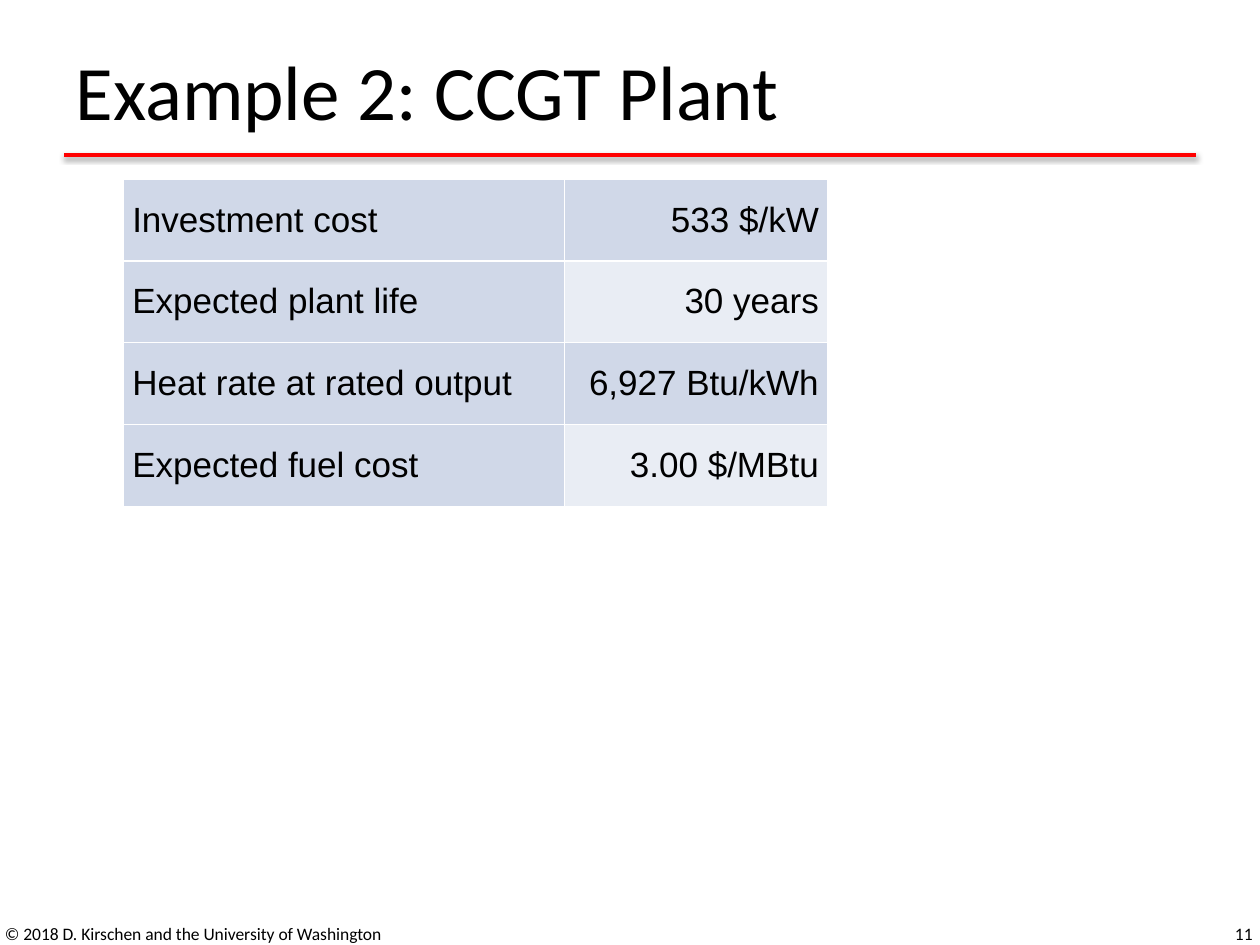
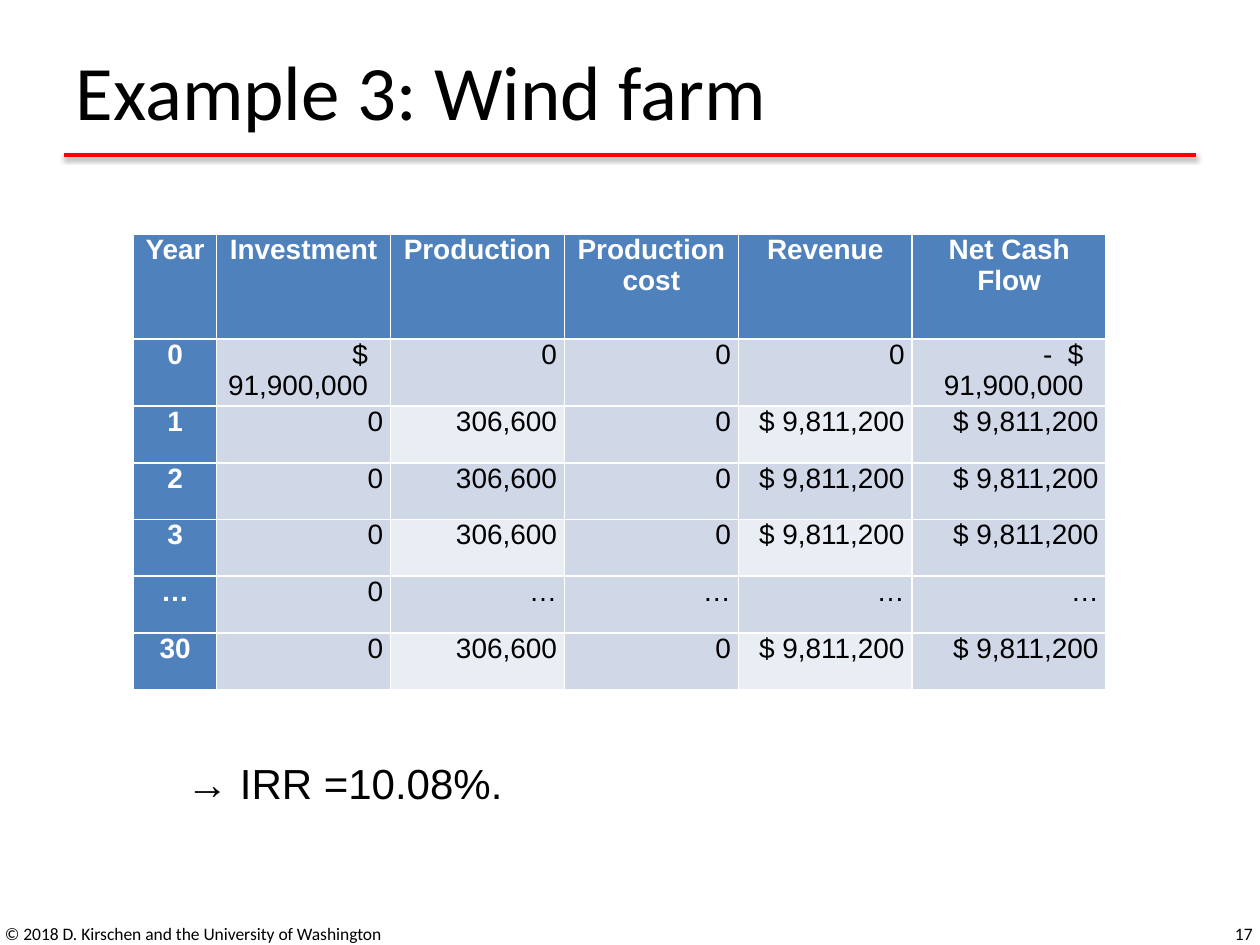
"""Build two slides on generation investment: a CCGT plant and a wind farm."""
from lxml import etree
from pptx import Presentation, util as u
from pptx.dml.color import RGBColor
from pptx.enum import shapes, text

PX = 9144
BLACK = RGBColor(0x00, 0x00, 0x00)
WHITE = RGBColor(0xFF, 0xFF, 0xFF)
RED = RGBColor(0xFF, 0x00, 0x00)
BLUE = RGBColor(0x4F, 0x81, 0xBD)
BAND_DARK = RGBColor(0xD0, 0xD8, 0xE8)
BAND_LIGHT = RGBColor(0xE9, 0xED, 0xF4)
LEFT, CENTER, RIGHT = text.PP_ALIGN.LEFT, text.PP_ALIGN.CENTER, text.PP_ALIGN.RIGHT
MIDDLE, TOP = text.MSO_ANCHOR.MIDDLE, text.MSO_ANCHOR.TOP

TITLE = {"name": "Calibri", "size": u.Pt(44)}
FOOTER = {"name": "Calibri", "size": u.Pt(10)}
RESULT = {"name": "Arial", "size": u.Pt(24)}
RULE_SHADOW = (
    '<a:effectLst xmlns:a="http://schemas.openxmlformats.org/drawingml/2006/main">'
    '<a:outerShdw blurRad="40000" dist="20000" dir="5400000" rotWithShape="0">'
    '<a:srgbClr val="000000"><a:alpha val="38000"/></a:srgbClr>'
    '</a:outerShdw></a:effectLst>'
)

YEARLY = ["0", "306,600", "0", "$ 9,811,200", "$ 9,811,200"]
PAGES = [
    {
        "title": "Example 2: CCGT Plant", "number": "11",
        "at": (98, 142), "columns": [350, 209], "heights": [65] * 4,
        "headers": 0, "size": 20, "inset": 7, "anchor": MIDDLE,
        "cells": [
            ["Investment cost", "533 $/kW"],
            ["Expected plant life", "30 years"],
            ["Heat rate at rated output", "6,927 Btu/kWh"],
            ["Expected fuel cost", "3.00 $/MBtu"],
        ],
    },
    {
        "title": "Example 3: Wind farm", "number": "17",
        "at": (106, 186), "columns": [66] + [138] * 4 + [154], "heights": [83] + [45] * 6,
        "headers": 1, "size": 16, "inset": 6, "anchor": TOP,
        "cells": [
            ["Year", "Investment", "Production", "Production cost", "Revenue", "Net Cash Flow"],
            ["0", "$ 91,900,000", "0", "0", "0", "-  $ 91,900,000"],
            *[[year, *YEARLY] for year in "123"],
            ["…", "0", "…", "…", "…", "…"],
            ["30", *YEARLY],
        ],
        "result": "→ IRR =10.08%.",
    },
]


def write(frame, words, font, color=BLACK, align=LEFT, after=0):
    frame.text = words
    paragraph = frame.paragraphs[0]
    paragraph.alignment = align
    paragraph.space_after = u.Pt(after)
    run = paragraph.runs[0]
    for attribute, value in font.items():
        setattr(run.font, attribute, value)
    run.font.color.rgb = color


def add_label(slide, box, words, font, align=LEFT, anchor=MIDDLE, wrap=True):
    frame = slide.shapes.add_textbox(*[side * PX for side in box]).text_frame
    frame.word_wrap = wrap
    frame.vertical_anchor = anchor
    write(frame, words, font, align=align)


deck = Presentation()
deck.slide_width, deck.slide_height = 1000 * PX, 750 * PX

for page in PAGES:
    slide = deck.slides.add_slide(deck.slide_layouts[5])

    rule = slide.shapes.add_connector(
        shapes.MSO_CONNECTOR.STRAIGHT, 51 * PX, 123 * PX, 949 * PX, 123 * PX)
    rule.line.color.rgb = RED
    rule.line.width = u.Pt(2)
    rule._element.spPr.append(etree.fromstring(RULE_SHADOW))

    heading = slide.shapes.title
    for side, value in {"left": 50, "top": 13, "width": 900, "height": 117}.items():
        setattr(heading, side, value * PX)
    heading.text_frame.vertical_anchor = MIDDLE
    write(heading.text_frame, page["title"], TITLE)

    add_label(slide, (-6, 721, 388, 40),
              "© 2018 D. Kirschen and the University of Washington", FOOTER)
    add_label(slide, (771, 721, 233, 40), page["number"], FOOTER, RIGHT)

    columns, heights, headers = page["columns"], page["heights"], page["headers"]
    left, top = page["at"]
    figures = slide.shapes.add_table(
        len(heights), len(columns), left * PX, top * PX,
        sum(columns) * PX, sum(heights) * PX).table
    figures.first_row = figures.first_col = bool(headers)
    for column, width in zip(figures.columns, columns):
        column.width = width * PX
    for row, height in zip(figures.rows, heights):
        row.height = height * PX

    for r, entries in enumerate(page["cells"]):
        for c, entry in enumerate(entries):
            cell = figures.cell(r, c)
            is_header = r < headers or c < headers
            is_light = (r - headers) % 2 and (c - headers) % 2
            hang = 12 if "91,900,000" in entry else 0
            layout = {
                "margin_left": page["inset"] * PX,
                "margin_right": (page["inset"] + hang) * PX,
                "margin_top": 0,
                "margin_bottom": 0,
                "vertical_anchor": page["anchor"],
            }
            for attribute, value in layout.items():
                setattr(cell, attribute, value)
            cell.fill.solid()
            cell.fill.fore_color.rgb = BLUE if is_header else BAND_LIGHT if is_light else BAND_DARK
            font = {"name": "Arial", "size": u.Pt(page["size"]), "bold": is_header}
            align = CENTER if is_header else RIGHT if c else LEFT
            write(cell.text_frame, entry, font, WHITE if is_header else BLACK, align, 6)

    if "result" in page:
        add_label(slide, (138, 596, 282, 50), page["result"], RESULT, anchor=TOP, wrap=False)

deck.save("out.pptx")
